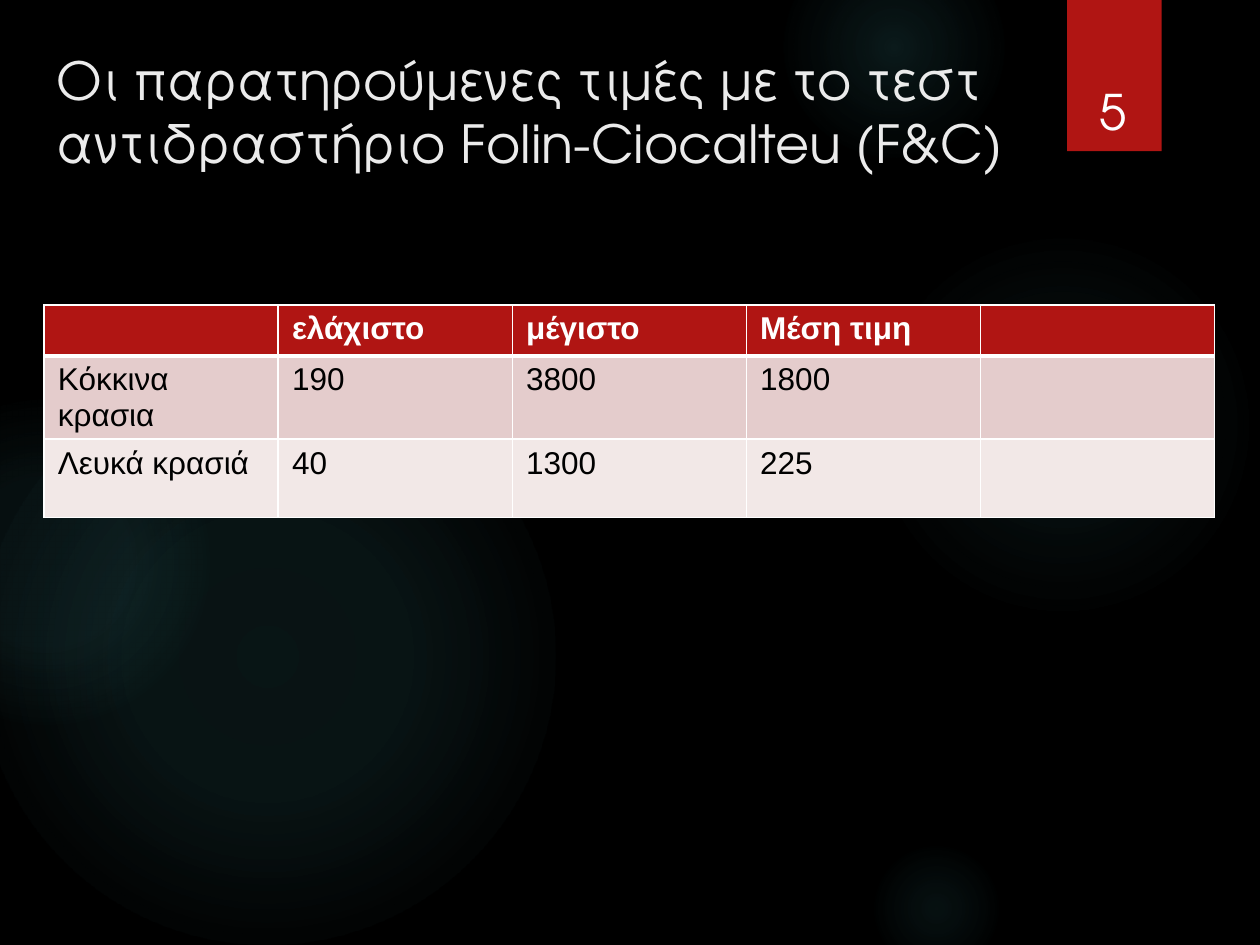
"""Builds the slide with the observed Folin-Ciocalteu values for wines."""
from lxml.etree import SubElement
from pptx import Presentation
from pptx.dml.color import RGBColor
from pptx.enum.shapes import MSO_SHAPE as SHAPE
from pptx.enum.text import MSO_ANCHOR as ANCHOR, PP_ALIGN as ALIGN
from pptx.oxml import parse_xml
from pptx.oxml.ns import nsdecls, qn
from pptx.util import Inches, Pt

HEADING = "TeX Gyre Adventor"
RED, WHITE, BLACK, GLOW = "B01513", "FFFFFF", "000000", "50B9C1"

GLOWS = [
    (6.89, 1.83, 3.08, [(0, 7), (36, 6), (69, 0)]),
    (6.22, -0.5, 1.75, [(0, 14), (36, 7), (73, 0)]),
    (6.89, 6.67, 1.08, [(0, 9), (36, 5), (66, 0)]),
    (-0.17, 2.92, 4.58, [(0, 11), (36, 10), (75, 0)]),
    (-0.92, 3.17, 2.58, [(0, 8), (36, 8), (72, 0)]),
]
ROWS = [
    ["", "ελάχιστο", "μέγιστο", "Μέση τιμη", ""],
    ["Κόκκινα κρασια", "190", "3800", "1800", ""],
    ["Λευκά κρασιά", "40", "1300", "225", ""],
]
ROW_STYLES = [
    {"height": 0.4, "fill": RED, "color": WHITE, "bold": True, "bottom": 3},
    {"height": 0.66, "fill": "E4CCCC", "color": BLACK, "bold": False, "bottom": 1},
    {"height": 0.62, "fill": "F2E8E7", "color": BLACK, "bold": False, "bottom": 1},
]


def rgb(value):
    return RGBColor.from_string(value)


class Deck:
    def __init__(self, width, height, background):
        self.prs = Presentation()
        self.prs.slide_width, self.prs.slide_height = Inches(width), Inches(height)
        self.s = self.prs.slides.add_slide(self.prs.slide_layouts[6])
        fill = self.s.background.fill
        fill.solid()
        fill.fore_color.rgb = rgb(background)

    def shape(self, kind, *box):
        sp = self.s.shapes.add_shape(kind, *map(Inches, box))
        sp.shadow.inherit = False
        sp.line.fill.background()
        return sp

    def glow(self, x, y, size, stops):
        sp = self.shape(SHAPE.OVAL, x, y, size, size)
        marks = "".join(
            f'<a:gs pos="{pos * 1000}"><a:srgbClr val="{GLOW}">'
            f'<a:alpha val="{alpha * 1000}"/></a:srgbClr></a:gs>'
            for pos, alpha in stops)
        grad = parse_xml(
            f'<a:gradFill {nsdecls("a")}><a:gsLst>{marks}</a:gsLst><a:path path="circle">'
            '<a:fillToRect l="50000" t="50000" r="50000" b="50000"/></a:path></a:gradFill>')
        sp._element.spPr.find(qn("a:prstGeom")).addnext(grad)

    def tab(self, *box):
        sp = self.shape(SHAPE.RECTANGLE, *box)
        sp.fill.solid()
        sp.fill.fore_color.rgb = rgb(RED)
        sp._element.spPr.find(qn("a:effectLst")).append(parse_xml(
            f'<a:outerShdw {nsdecls("a")} blurRad="{Pt(3)}" dist="{Pt(2)}" dir="5400000">'
            f'<a:srgbClr val="{BLACK}"><a:alpha val="45000"/></a:srgbClr></a:outerShdw>'))

    def add_text(self, tf, text, color, align=ALIGN.LEFT, **font):
        p = tf.paragraphs[0]
        p.alignment = align
        r = p.add_run()
        r.text = text
        r.font.color.rgb = rgb(color)
        for name, value in font.items():
            setattr(r.font, name, value)

    def text(self, box, text, size, color, anchor, align=ALIGN.LEFT):
        tf = self.s.shapes.add_textbox(*map(Inches, box)).text_frame
        tf.word_wrap, tf.vertical_anchor = True, anchor
        self.add_text(tf, text, color, align, size=Pt(size), name=HEADING)

    def borders(self, cell, widths):
        tcPr = cell._tc.get_or_add_tcPr()
        for i, (side, width) in enumerate(widths.items()):
            ln = SubElement(tcPr, qn(f"a:ln{side}"), w=str(Pt(width)))
            SubElement(SubElement(ln, qn("a:solidFill")), qn("a:srgbClr"), val=WHITE)
            tcPr.insert(i, ln)

    def table(self, x, y, width, rows, styles):
        height = sum(style["height"] for style in styles)
        tbl = self.s.shapes.add_table(
            len(rows), len(rows[0]), *map(Inches, (x, y, width, height))).table
        above = 1
        for i, (values, style) in enumerate(zip(rows, styles)):
            tbl.rows[i].height = Inches(style["height"])
            for cell, value in zip(tbl.rows[i].cells, values):
                cell.fill.solid()
                cell.fill.fore_color.rgb = rgb(style["fill"])
                cell.margin_left = cell.margin_right = Inches(0.11)
                self.borders(cell, {"L": 1, "R": 1, "T": above, "B": style["bottom"]})
                if value:
                    self.add_text(cell.text_frame, value, style["color"],
                                  size=Pt(18), name="Arial", bold=style["bold"])
            above = style["bottom"]


def main():
    deck = Deck(10, 7.5, BLACK)
    for glow in GLOWS:
        deck.glow(*glow)
    deck.tab(8.47, 0, 0.75, 1.2)
    deck.table(0.35, 2.42, 9.29, ROWS, ROW_STYLES)
    deck.text((8.49, 0.32, 0.69, 0.84), "5", 28, WHITE, ANCHOR.BOTTOM, ALIGN.CENTER)
    deck.text((0.35, 0.21, 8.11, 1.34),
              "Οι παρατηρούμενες τιμές με το τεστ αντιδραστήριο Folin-Ciocalteu (F&C)",
              30, "EBEBEB", ANCHOR.MIDDLE)
    deck.prs.save("out.pptx")


if __name__ == "__main__":
    main()
